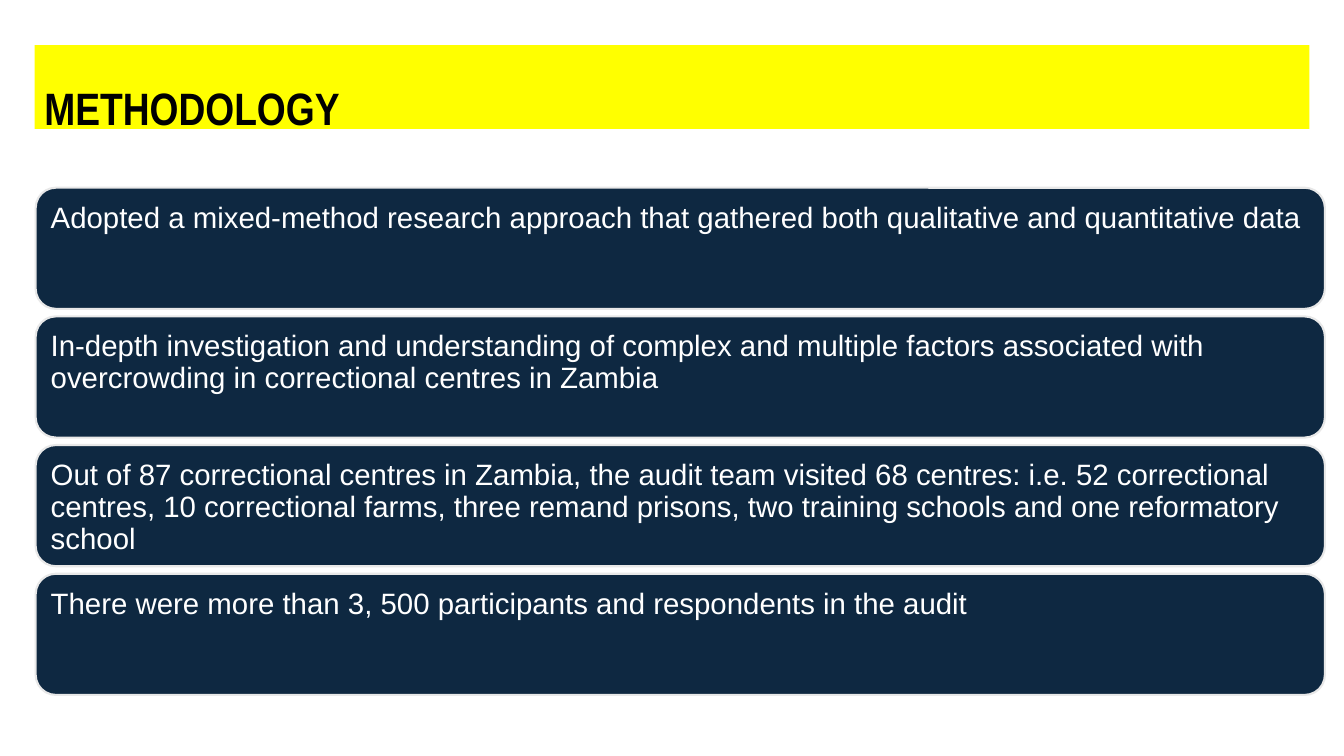
from pptx import Presentation
from pptx.dml.color import RGBColor
from pptx.enum.shapes import MSO_SHAPE
from pptx.enum.text import MSO_ANCHOR, PP_ALIGN
from pptx.util import Cm, Pt

ROUNDED = MSO_SHAPE.ROUNDED_RECTANGLE
TOP = MSO_ANCHOR.TOP
LEFT = PP_ALIGN.LEFT
TITLE_ONLY = 5

COLORS = {
    "banner": "FFFF00",
    "heading": "000000",
    "card": "0E2841",
    "card_edge": "E8E8E8",
    "card_text": "FFFFFF",
}

METHODS = [
    "Adopted a mixed-method research approach that gathered both qualitative "
    "and quantitative data",
    "In-depth investigation and understanding of complex and multiple factors "
    "associated with overcrowding in correctional centres in Zambia",
    "Out of 87 correctional centres in Zambia, the audit team visited 68 centres: "
    "i.e. 52 correctional centres, 10 correctional farms, three remand prisons, "
    "two training schools and one reformatory school",
    "There were more than 3, 500 participants and respondents in the audit",
]


def color(name):
    return RGBColor.from_string(COLORS[name])


def write(shape, text, *, size, font, ink, bold=False, insets=(0.23, 0.23, 0.23, 0.23)):
    """Fill a shape with one left-aligned paragraph; insets in cm."""
    frame = shape.text_frame
    frame.word_wrap = True
    frame.vertical_anchor = TOP
    (frame.margin_left, frame.margin_top,
     frame.margin_right, frame.margin_bottom) = map(Cm, insets)
    paragraph = frame.paragraphs[0]
    paragraph.alignment = LEFT
    paragraph.line_spacing = 0.9
    run = paragraph.add_run()
    run.text = text
    run.font.size = Pt(size)
    run.font.name = font
    run.font.bold = bold
    run.font.color.rgb = color(ink)


def add_banner(slide, left, top, width, height):
    banner = slide.shapes.title
    banner.left, banner.top = Cm(left), Cm(top)
    banner.width, banner.height = Cm(width), Cm(height)
    banner.fill.solid()
    banner.fill.fore_color.rgb = color("banner")
    write(banner, "METHODOLOGY", size=32.4, font="Arial Narrow", ink="heading",
          bold=True, insets=(0.25, 1.03, 0.25, 0))


def add_method_cards(slide, left, top, width, height, gap=0.19):
    card_height = (height - gap * (len(METHODS) - 1)) / len(METHODS)
    for index, method in enumerate(METHODS):
        card_top = top + index * (card_height + gap)
        card = slide.shapes.add_shape(
            ROUNDED, Cm(left), Cm(card_top), Cm(width), Cm(card_height))
        card.shadow.inherit = False
        card.fill.solid()
        card.fill.fore_color.rgb = color("card")
        card.line.color.rgb = color("card_edge")
        card.line.width = Pt(1.5)
        write(card, method, size=21, font="Arial", ink="card_text")


def main():
    deck = Presentation()
    deck.slide_width, deck.slide_height = Cm(33.87), Cm(19.05)
    slide = deck.slides.add_slide(deck.slide_layouts[TITLE_ONLY])
    # Heading banner
    add_banner(slide, 0.87, 1.14, 32.13, 2.11)
    # Stack of method statements
    add_method_cards(slide, 0.9, 4.73, 32.49, 12.78)
    deck.save("out.pptx")


if __name__ == "__main__":
    main()
